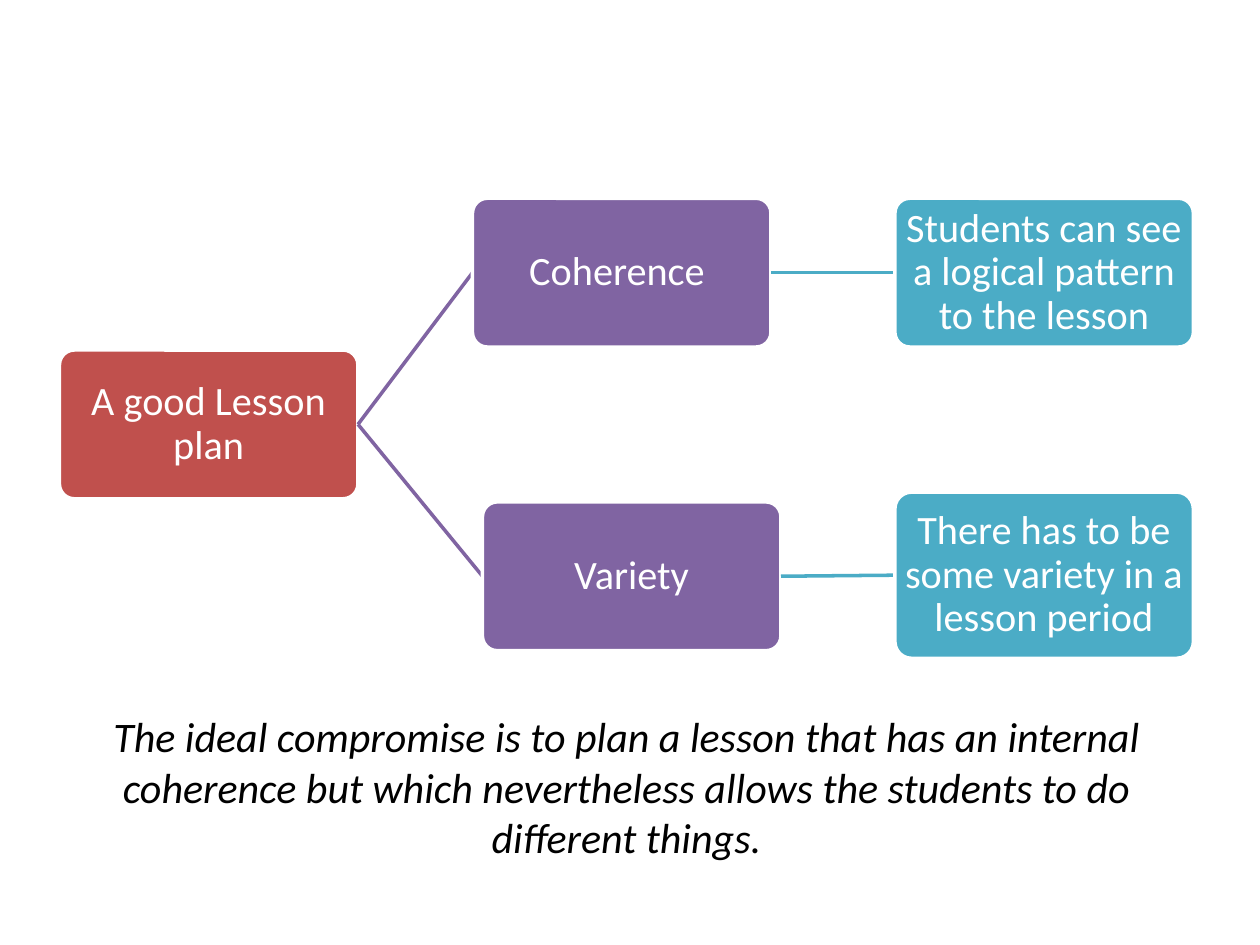
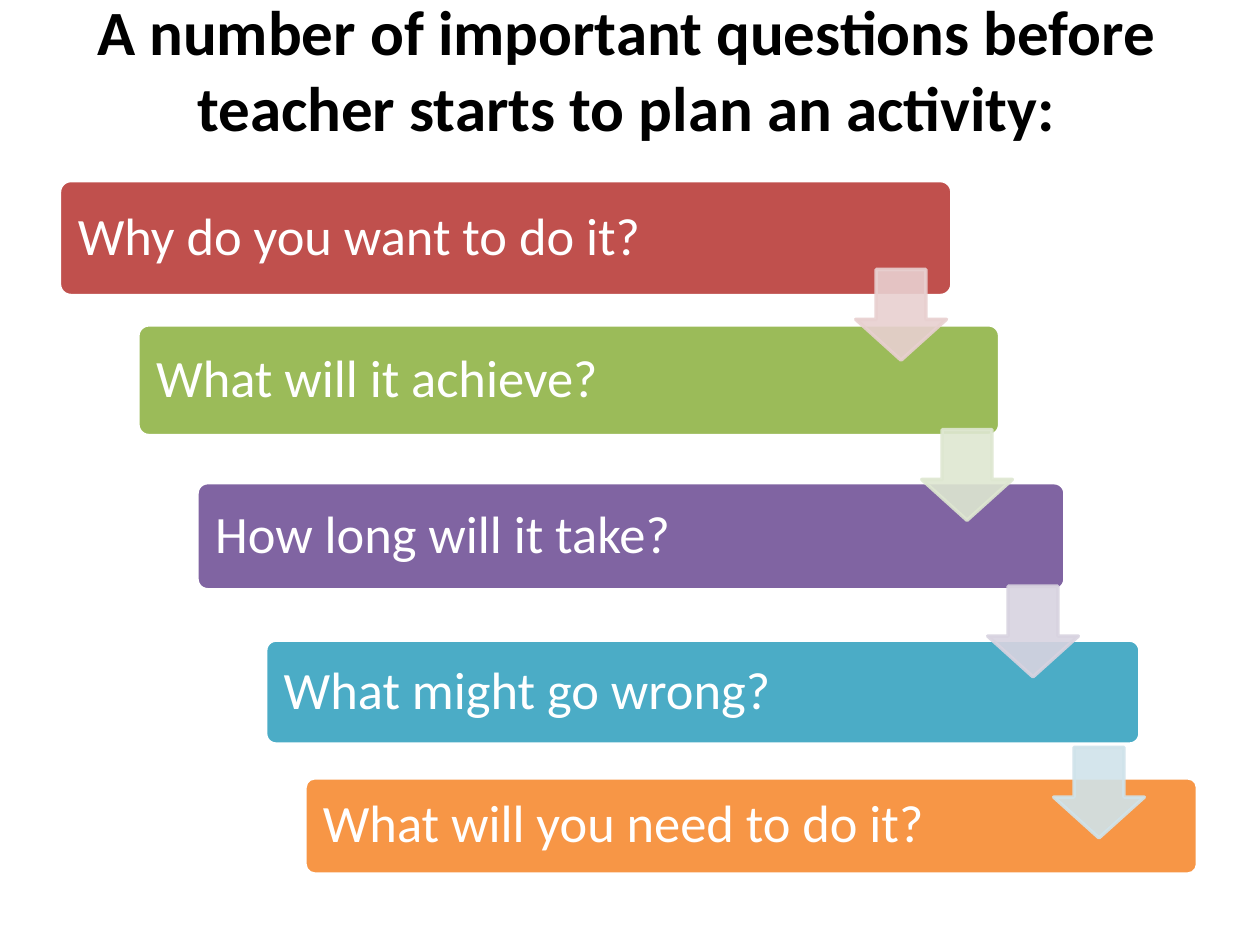
from dataclasses import dataclass

from lxml.etree import SubElement
from pptx import Presentation
from pptx.dml.color import RGBColor
from pptx.enum.shapes import MSO_CONNECTOR, MSO_SHAPE
from pptx.enum.text import MSO_ANCHOR, MSO_AUTO_SIZE, PP_ALIGN
from pptx.oxml.ns import qn
from pptx.util import Pt


@dataclass(frozen=True)
class Theme:
    """Colours, type sizes and line width of the deck."""
    font: str = "Calibri"
    black: str = "000000"
    white: str = "FFFFFF"
    red: str = "C0504D"
    green: str = "9BBB59"
    purple: str = "8064A2"
    teal: str = "4BACC6"
    orange: str = "F79646"
    arrows: tuple = ("E8D0D0", "DEE7D1", "D8D3E0", "D0E3EA")
    heading: int = 36
    remark: int = 24
    node: int = 23
    bar: int = 30
    line: int = 2


T = Theme()


def set_attrs(obj, values):
    """Set each named attribute on an object."""
    for name, value in values.items():
        setattr(obj, name, value)


def write(shape, text, size, colour, align=PP_ALIGN.CENTER, spacing=1.0, inset=None, **style):
    """Put one formatted paragraph into a shape."""
    tf = shape.text_frame
    set_attrs(tf, {"word_wrap": True, "auto_size": MSO_AUTO_SIZE.NONE,
                   "vertical_anchor": MSO_ANCHOR.MIDDLE})
    if inset is not None:
        sides = ("left", "top", "right", "bottom")
        set_attrs(tf, {f"margin_{side}": Pt(inset) for side in sides})
    p = tf.paragraphs[0]
    set_attrs(p, {"alignment": align, "line_spacing": spacing})
    r = p.add_run()
    r.text = text
    set_attrs(r.font, {"name": T.font, "size": Pt(size), **style})
    r.font.color.rgb = RGBColor.from_string(colour)


def add_title(s, text, top, size, **style):
    """Place and fill the title placeholder."""
    sp = s.shapes.title
    set_attrs(sp, {"left": Pt(34), "top": Pt(top), "width": Pt(648), "height": Pt(78)})
    write(sp, text, size, T.black, **style)


def add_preset(s, kind, box, fill, line, adjustments):
    """Add a filled and outlined preset shape."""
    sp = s.shapes.add_shape(kind, *map(Pt, box))
    sp.shadow.inherit = False
    sp.fill.solid()
    sp.fill.fore_color.rgb = RGBColor.from_string(fill)
    sp.line.color.rgb = RGBColor.from_string(line)
    sp.line.width = Pt(T.line)
    for i, value in enumerate(adjustments):
        sp.adjustments[i] = value
    return sp


def add_box(s, box, fill):
    """Add a rounded box with a white outline."""
    return add_preset(s, MSO_SHAPE.ROUNDED_RECTANGLE, box, fill, T.white, [0.1])


def add_node(s, text, left, top, colour, parent=None, height=85):
    """Add a tree node, with a line from its parent behind it."""
    if parent is not None:
        cx = s.shapes.add_connector(MSO_CONNECTOR.STRAIGHT, 0, 0, 0, 0)
        cx.line.color.rgb = RGBColor.from_string(colour)
        cx.line.width = Pt(T.line)
        SubElement(cx._element.spPr, qn("a:effectLst"))
        cx.begin_connect(parent, 3)
    sp = add_box(s, (left, top, 170.6, height), colour)
    write(sp, text, T.node, T.white, spacing=0.9, inset=1.5)
    if parent is not None:
        cx.end_connect(sp, 1)
    return sp


def add_bar(s, text, box, colour):
    """Add one question bar."""
    sp = add_box(s, box, colour)
    write(sp, text, T.bar, T.white, PP_ALIGN.LEFT, 0.9, 8.6)


def add_arrow(s, left, top, colour):
    """Add a slightly transparent down arrow."""
    sp = add_preset(s, MSO_SHAPE.DOWN_ARROW, (left, top, 51.8, 51.8),
                    colour, colour, [0.55, 0.45])
    for clr in sp._element.spPr.iter(qn("a:srgbClr")):
        SubElement(clr, qn("a:alpha"), val="90000")


def build_lesson_plan(s):
    """Build the tree of lesson plan qualities."""
    add_title(s, "The ideal compromise is to plan a lesson that has an internal coherence "
              "but which nevertheless allows the students to do different things.",
              410.4, T.remark, italic=True)
    root = add_node(s, "A good Lesson plan", 34, 200, T.red)
    coherence = add_node(s, "Coherence ", 270, 113.3, T.purple, root)
    add_node(s, "Students can see a logical pattern to the lesson",
             511.4, 113.3, T.teal, coherence)
    variety = add_node(s, "Variety", 275.7, 286.8, T.purple, root)
    add_node(s, "There has to be some variety in a lesson period",
             511.4, 281.2, T.teal, variety, 95)


def build_questions(s):
    """Build the staircase of planning questions."""
    add_title(s, "A number of important questions before teacher starts to plan an activity:",
              0, T.heading, bold=True)
    bars = [
        ("Why do you want to do it?", (34, 103.2, 510, 65.7), T.red),
        ("What will it achieve?", (78.8, 185.6, 492.5, 63.3), T.green),
        ("How long will it take?", (112.6, 275.8, 496, 61.2), T.purple),
        ("What might go wrong?", (151.8, 365.8, 499.6, 59.4), T.teal),
        ("What will you need to do it?", (174.3, 444.5, 510, 55), T.orange),
    ]
    for bar in bars:
        add_bar(s, *bar)
    for i, (top, colour) in enumerate(zip((154, 245.5, 335, 427), T.arrows)):
        add_arrow(s, 489 + 37.7 * i, top, colour)


def main():
    """Build and save both slides."""
    prs = Presentation()
    set_attrs(prs, {"slide_width": Pt(720), "slide_height": Pt(540)})
    for build in (build_lesson_plan, build_questions):
        build(prs.slides.add_slide(prs.slide_layouts[5]))
    prs.save("out.pptx")


if __name__ == "__main__":
    main()
